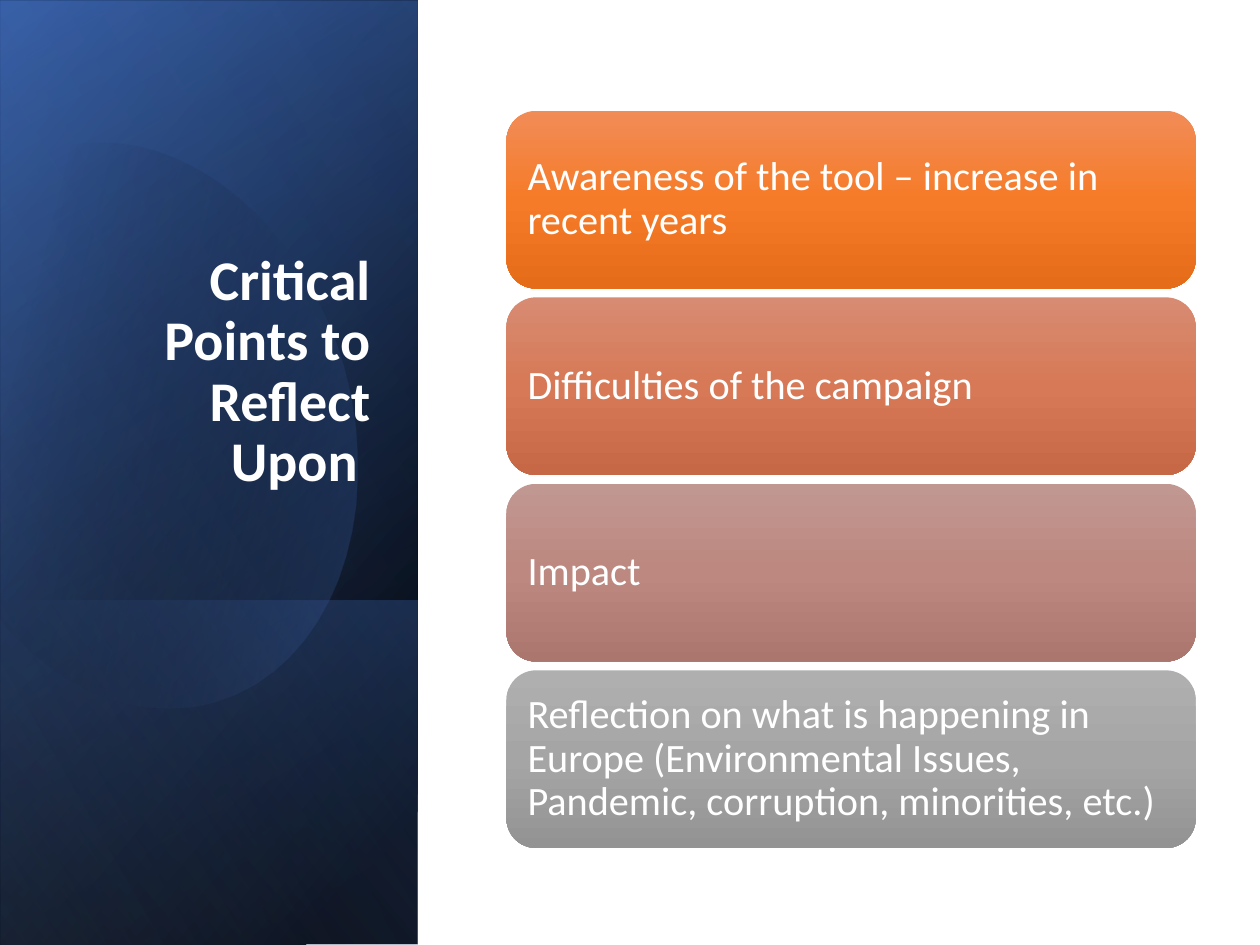
from dataclasses import dataclass
from math import cos, radians, sin
from typing import NamedTuple

from pptx import Presentation
from pptx.dml.color import RGBColor
from pptx.enum.shapes import MSO_SHAPE as Preset
from pptx.enum.text import MSO_ANCHOR as Anchor, MSO_AUTO_SIZE as AutoSize, PP_ALIGN as Align
from pptx.oxml import parse_xml
from pptx.oxml.ns import nsdecls, qn
from pptx.util import Emu, Pt

EMU_PER_PX = 9144
BLACK = RGBColor(0x00, 0x00, 0x00)
WHITE = RGBColor(0xFF, 0xFF, 0xFF)
NAVY = RGBColor(0x2F, 0x55, 0x97)
BLUE = RGBColor(0x44, 0x72, 0xC4)
PALE_BLUE = RGBColor(0x8F, 0xAA, 0xDC)


class Stop(NamedTuple):
    position: int
    color: RGBColor
    alpha: int = 100


class Box(NamedTuple):
    left: int
    top: int
    width: int
    height: int


@dataclass
class Panel:
    box: Box
    stops: list[Stop]
    angle: int


@dataclass
class Card:
    text: str
    colors: tuple[RGBColor, RGBColor, RGBColor]


PANELS = [
    Panel(Box(-209, 209, 750, 331), [Stop(8, BLACK), Stop(100, NAVY)], 50),
    Panel(Box(-209, 211, 750, 331), [Stop(0, BLACK, 0), Stop(99, BLUE, 46)], 30),
    Panel(Box(29, 448, 274, 331), [Stop(2, BLUE, 29), Stop(100, BLACK, 30)], 130),
]
GLAZE = Panel(Box(-209, 209, 750, 331), [Stop(0, BLACK, 0), Stop(99, PALE_BLUE, 11)], 120)

OVAL_STOPS = [Stop(29, BLACK, 0), Stop(100, BLUE, 43)]
OVAL_CENTER = (119, 334)
OVAL_ROTATION = 343.9
OVAL_START = (96, 114)
OVAL_SEGMENTS = [
    [(171, 122), (244, 192), (273, 290)],
    [(307, 412), (262, 531), (171, 557)],
    [(114, 574), (53, 550), (7, 500)],
    [(-3, 488)],
    [(-25, 166)],
    [(-15, 154)],
    [(2, 137), (22, 125), (45, 118)],
    [(62, 113), (79, 112), (96, 114)],
]
CURVE_STEPS = 16

CARDS = [
    Card("Awareness of the tool – increase in recent years",
         (RGBColor(0xF1, 0x8C, 0x57), RGBColor(0xF6, 0x7B, 0x28), RGBColor(0xE5, 0x6C, 0x19))),
    Card("Difficulties of the campaign",
         (RGBColor(0xD7, 0x8B, 0x72), RGBColor(0xD7, 0x79, 0x56), RGBColor(0xC6, 0x68, 0x46))),
    Card("Impact",
         (RGBColor(0xC1, 0x97, 0x91), RGBColor(0xBC, 0x88, 0x80), RGBColor(0xAA, 0x76, 0x6E))),
    Card("Reflection on what is happening in Europe "
         "(Environmental Issues, Pandemic, corruption, minorities, etc.)",
         (RGBColor(0xAF, 0xAF, 0xAF), RGBColor(0xA5, 0xA5, 0xA5), RGBColor(0x93, 0x93, 0x93))),
]
FIRST_CARD = Box(402, 88, 547, 141)
CARD_PITCH = 148
TITLE_BOX = Box(48, 184, 256, 262)


def px(length: float) -> Emu:
    return Emu(round(length * EMU_PER_PX))


def apply(target, values: dict) -> None:
    for name, value in values.items():
        setattr(target, name, value)


def paint(shape, stops: list[Stop], angle: int) -> None:
    shape.shadow.inherit = False
    shape.line.fill.background()
    shape.fill.background()
    marks = "".join(
        f'<a:gs pos="{stop.position * 1000}"><a:srgbClr val="{stop.color}">'
        f'<a:alpha val="{stop.alpha * 1000}"/></a:srgbClr></a:gs>'
        for stop in stops
    )
    gradient = parse_xml(
        f'<a:gradFill {nsdecls("a")} rotWithShape="1"><a:gsLst>{marks}</a:gsLst>'
        f'<a:lin ang="{angle * 60000}" scaled="0"/></a:gradFill>'
    )
    properties = shape.element.spPr
    properties.replace(properties.find(qn("a:noFill")), gradient)


def write(shape, text: str, frame_values: dict, align: Align, font_values: dict) -> None:
    frame = shape.text_frame
    frame.text = text
    apply(frame, {"word_wrap": True, "auto_size": AutoSize.NONE, **frame_values})
    para = frame.paragraphs[0]
    apply(para, {"alignment": align, "line_spacing": 0.9})
    span = para.runs[0]
    apply(span.font, {"name": "Calibri", **font_values})
    span.font.color.rgb = WHITE


def draw_panel(page, panel: Panel):
    shape = page.shapes.add_shape(Preset.RECTANGLE, *map(px, panel.box))
    shape.rotation = 90
    shape.element.spPr.find(qn("a:xfrm")).set("flipH", "1")
    paint(shape, panel.stops, panel.angle)
    return shape


def bezier(points: list[tuple], t: float) -> tuple[float, float]:
    weights = ((1 - t) ** 3, 3 * t * (1 - t) ** 2, 3 * t ** 2 * (1 - t), t ** 3)
    return tuple(sum(w * point[axis] for w, point in zip(weights, points)) for axis in (0, 1))


def unrotate(point: tuple[float, float]) -> tuple[Emu, Emu]:
    turn = radians(-OVAL_ROTATION)
    dx, dy = (value - middle for value, middle in zip(point, OVAL_CENTER))
    return (px(OVAL_CENTER[0] + dx * cos(turn) - dy * sin(turn)),
            px(OVAL_CENTER[1] + dx * sin(turn) + dy * cos(turn)))


def draw_oval(page) -> None:
    outline = [OVAL_START]
    for segment in OVAL_SEGMENTS:
        if len(segment) == 1:
            outline += segment
        else:
            curve = [outline[-1], *segment]
            outline += [bezier(curve, step / CURVE_STEPS) for step in range(1, CURVE_STEPS + 1)]
    corners = [unrotate(point) for point in outline]
    builder = page.shapes.build_freeform(*corners[0])
    builder.add_line_segments(corners[1:], close=True)
    shape = builder.convert_to_shape()
    shape.rotation = OVAL_ROTATION
    paint(shape, OVAL_STOPS, 30)


def draw_title(page, below) -> None:
    title = page.shapes.title
    apply(title, dict(zip(Box._fields, map(px, TITLE_BOX))))
    write(title, "Critical Points to Reflect Upon ",
          {"vertical_anchor": Anchor.BOTTOM, "margin_bottom": px(54)},
          Align.RIGHT, {"size": Pt(32), "bold": True})
    below.element.addnext(title.element)


def draw_card(page, card: Card, row: int) -> None:
    box = FIRST_CARD._replace(top=FIRST_CARD.top + row * CARD_PITCH)
    shape = page.shapes.add_shape(Preset.ROUNDED_RECTANGLE, *map(px, box))
    paint(shape, [Stop(50 * place, color) for place, color in enumerate(card.colors)], 90)
    margins = {f"margin_{side}": px(10) for side in ("left", "top", "right", "bottom")}
    write(shape, card.text, {"vertical_anchor": Anchor.MIDDLE, **margins},
          Align.LEFT, {"size": Pt(23)})


def main() -> None:
    deck = Presentation()
    apply(deck, {"slide_width": px(1000), "slide_height": px(750)})
    page = deck.slides.add_slide(deck.slide_layouts.get_by_name("Title Only"))
    for panel in PANELS:
        draw_panel(page, panel)
    draw_oval(page)
    glaze = draw_panel(page, GLAZE)
    draw_title(page, glaze)
    for row, card in enumerate(CARDS):
        draw_card(page, card, row)
    deck.save("out.pptx")


if __name__ == "__main__":
    main()
